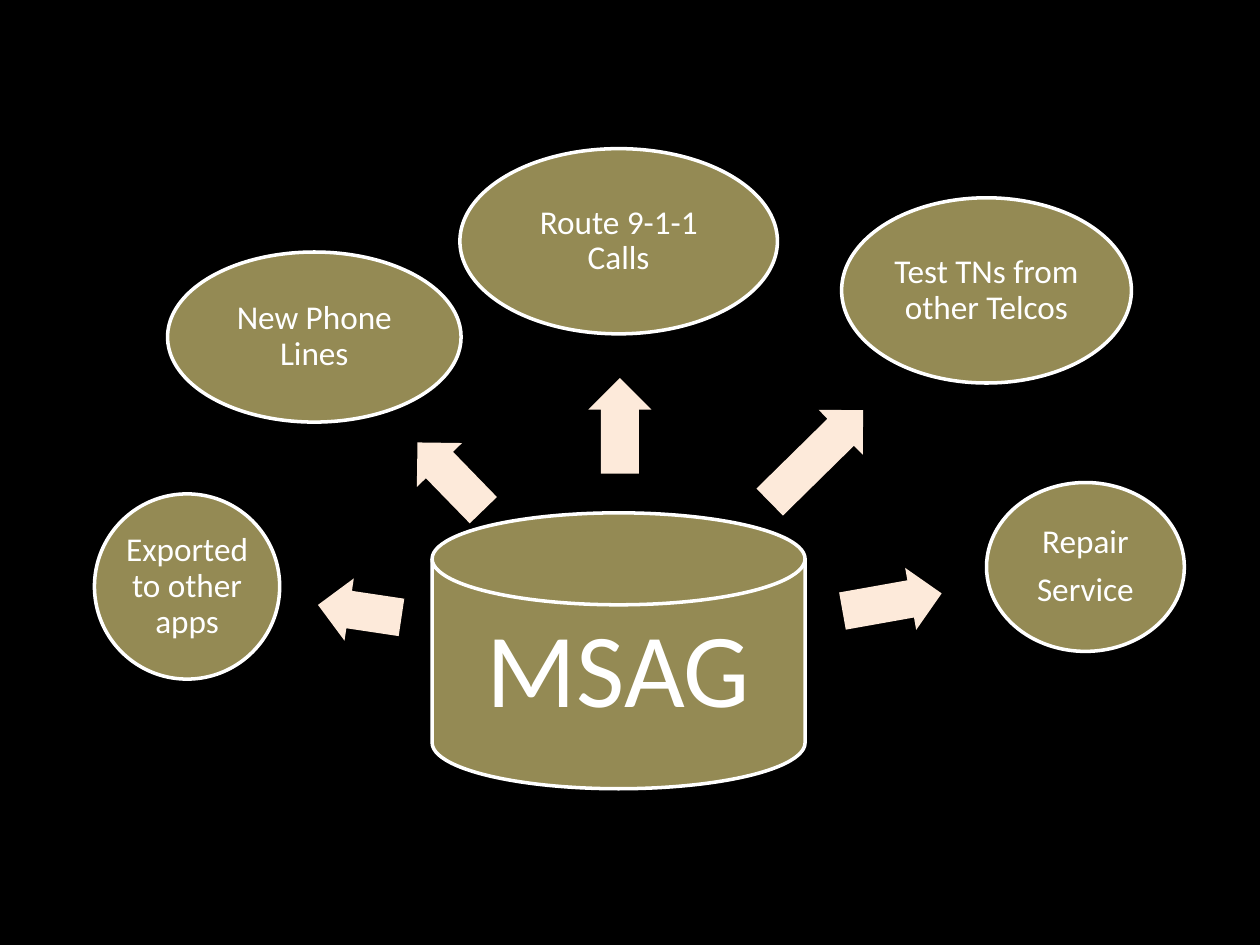
from pptx import Presentation
from pptx.dml.color import RGBColor
from pptx.enum.shapes import MSO_SHAPE as Shape
from pptx.enum.text import MSO_ANCHOR as Anchor, PP_ALIGN as Align
from pptx.util import Inches, Pt

# Grid of 100 columns by 75 rows
COLUMNS, ROWS = 100, 75
ARROW_HEIGHT = 5


def color(hex_text):
    return RGBColor.from_string(hex_text)


class Diagram:
    background, olive, peach, white = "000000", "948A54", "FDEADA", "FFFFFF"
    font = "Calibri"

    def __init__(self, deck):
        self.column = deck.slide_width / COLUMNS
        self.row = deck.slide_height / ROWS
        self.slide = deck.slides.add_slide(deck.slide_layouts[6])
        fill = self.slide.background.fill
        fill.solid()
        fill.fore_color.rgb = color(self.background)

    def shape(self, kind, left, top, width, height, fill):
        shape = self.slide.shapes.add_shape(
            kind, round(left * self.column), round(top * self.row),
            round(width * self.column), round(height * self.row))
        shape.shadow.inherit = False
        shape.fill.solid()
        shape.fill.fore_color.rgb = color(fill)
        return shape

    def label(self, kind, box, text, size, inset):
        shape = self.shape(kind, *box, self.olive)
        shape.line.color.rgb = color(self.white)
        shape.line.width = Pt(2)
        frame = shape.text_frame
        frame.text = text
        frame.word_wrap = True
        frame.vertical_anchor = Anchor.MIDDLE
        frame.margin_left = frame.margin_right = Inches(inset)
        frame.margin_top = frame.margin_bottom = Inches(inset)
        for para in frame.paragraphs:
            para.alignment = Align.CENTER
            para.line_spacing = 0.9
            para.space_after = Pt(0.35 * size)
            for span in para.runs:
                span.font.name = self.font
                span.font.size = Pt(size)
                span.font.color.rgb = color(self.white)

    def database(self, box, text):
        self.label(Shape.FLOWCHART_MAGNETIC_DISK, box, text, 60, 0.08)

    def use(self, box, text):
        self.label(Shape.OVAL, box, text, 19, 0.03)

    def arrow(self, left, top, length, angle):
        arrow = self.shape(Shape.RIGHT_ARROW, left, top, length, ARROW_HEIGHT, self.peach)
        arrow.line.fill.background()
        arrow.adjustments[0], arrow.adjustments[1] = 0.6, 0.5
        arrow.rotation = angle


# Each use: text, oval (left, top, width, height), arrow (left, top, length, angle)
USES = [
    ("Route 9-1-1 Calls", (36.5, 11.8, 25.2, 14.7), (45.4, 31.3, 7.6, 270)),
    ("Test TNs from other Telcos", (66.8, 15.7, 23, 14.7), (59.6, 33.7, 10.4, 315.5)),
    ("New Phone Lines", (13.3, 20, 23.3, 13.5), (32, 35.3, 7.5, 225.8)),
    ("Exported to other apps", (7.5, 39.2, 14.7, 14.7), (25.2, 46, 6.7, 188.5)),
    ("Repair\nService", (78.3, 38.3, 15.7, 13.4), (66.8, 45.3, 8, 349.9)),
]


def main():
    deck = Presentation()
    deck.slide_width, deck.slide_height = Inches(10), Inches(7.5)
    diagram = Diagram(deck)

    # Central database
    diagram.database((34.3, 40.7, 29.6, 21.9), "MSAG")

    # Uses around it, each with its arrow
    for text, oval, arrow in USES:
        diagram.arrow(*arrow)
        diagram.use(oval, text)

    deck.save("out.pptx")


if __name__ == "__main__":
    main()
